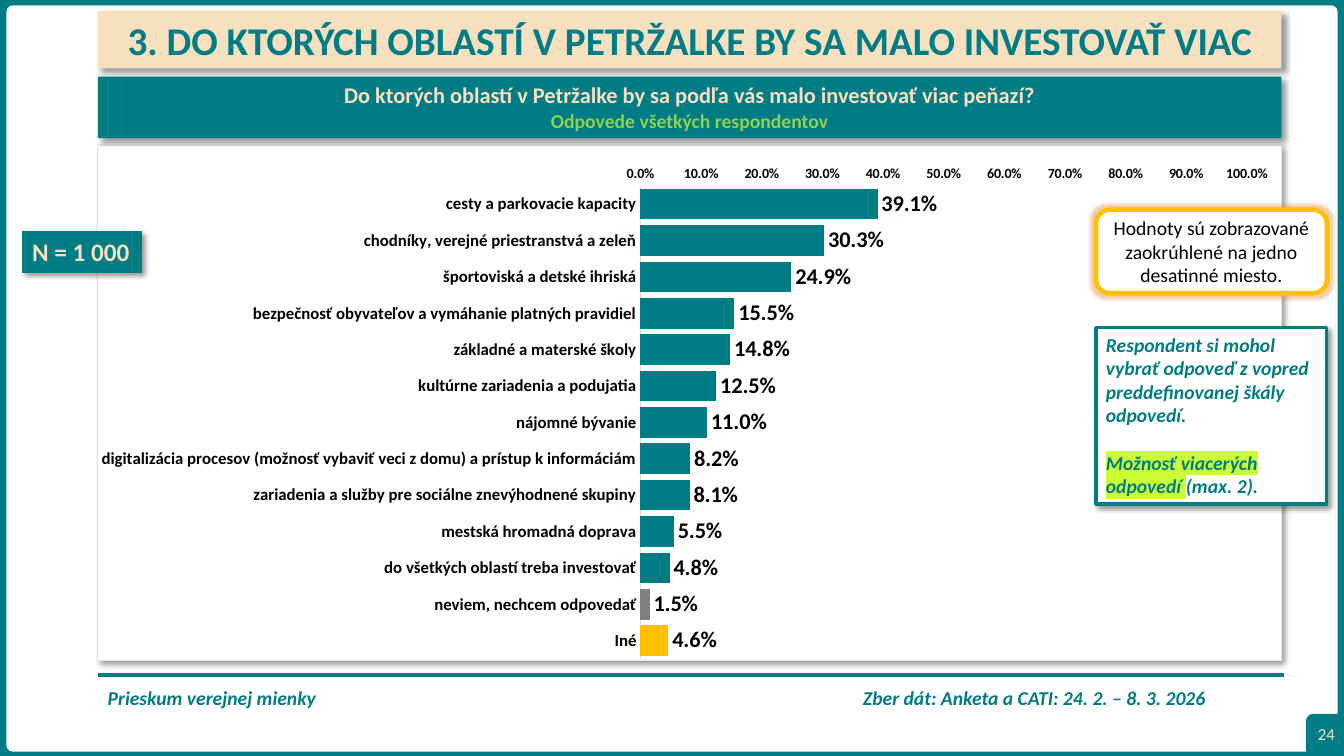
from lxml.etree import SubElement, fromstring
from pptx import Presentation
from pptx.chart.data import CategoryChartData
from pptx.dml.color import RGBColor
from pptx.enum.chart import XL_CHART_TYPE, XL_LABEL_POSITION, XL_TICK_MARK
from pptx.enum.shapes import MSO_CONNECTOR, MSO_SHAPE
from pptx.enum.text import MSO_ANCHOR, MSO_AUTO_SIZE, PP_ALIGN
from pptx.oxml.ns import nsdecls, qn
from pptx.util import Inches, Pt

COLORS = {
    "teal": "007C85", "sand": "F6E0C0", "white": "FFFFFF", "black": "000000",
    "pale": "E7E6E6", "axis": "D9D9D9", "grey": "808080", "amber": "FFC000",
    "green": "92D050", "lime": "CCFF33", "orange": "ED7D31",
}
FONT = "Calibri"
PERCENT = "###0.0%"
SHADOW = ('<a:outerShdw blurRad="50800" dist="38100" dir="2700000" algn="tl" rotWithShape="0">'
          '<a:srgbClr val="000000"><a:alpha val="40000"/></a:srgbClr></a:outerShdw>')
GLOW = (f'<a:glow rad="63500"><a:srgbClr val="{COLORS["orange"]}">'
        '<a:alpha val="40000"/></a:srgbClr></a:glow>')
LEFT, WIDTH = 0.97, 11.74
AREAS = [
    ("cesty a parkovacie kapacity", 0.391),
    ("chodníky, verejné priestranstvá a zeleň", 0.303),
    ("športoviská a detské ihriská", 0.249),
    ("bezpečnosť obyvateľov a vymáhanie platných pravidiel", 0.155),
    ("základné a materské školy", 0.148),
    ("kultúrne zariadenia a podujatia", 0.125),
    ("nájomné bývanie", 0.11),
    ("digitalizácia procesov (možnosť vybaviť veci z domu) a prístup k informáciám", 0.082),
    ("zariadenia a služby pre sociálne znevýhodnené skupiny", 0.081),
    ("mestská hromadná doprava", 0.055),
    ("do všetkých oblastí treba investovať", 0.048),
    ("neviem, nechcem odpovedať", 0.015),
    ("Iné", 0.046),
]


def rgb(name):
    """Return the palette colour called name."""
    return RGBColor.from_string(COLORS[name])


def style_font(font, size, color="black", bold=True, italic=False):
    """Apply the slide's typeface and the given format to a font."""
    font.name, font.size, font.bold, font.italic = FONT, Pt(size), bold, italic
    font.color.rgb = rgb(color)


def add_text(p, text, highlight=None, **fmt):
    """Add a formatted run to a paragraph."""
    r = p.add_run()
    r.text = text
    style_font(r.font, **fmt)
    if highlight:
        mark = fromstring(f'<a:highlight {nsdecls("a")}><a:srgbClr val="{COLORS[highlight]}"/></a:highlight>')
        r.font._element.find(qn("a:solidFill")).addnext(mark)


class SlideBuilder:
    """Holds the current slide and adds elements in its style."""

    def __init__(self, prs):
        """Start a title-only slide."""
        self.s = prs.slides.add_slide(prs.slide_layouts[5])

    def effects(self, sp, xml=""):
        """Give a shape exactly the listed effects."""
        sp._element.spPr.append(fromstring(f'<a:effectLst {nsdecls("a")}>{xml}</a:effectLst>'))

    def frame(self, sp, anchor=MSO_ANCHOR.TOP, wrap=True):
        """Set up a text frame and return its first paragraph."""
        tf = sp.text_frame
        tf.word_wrap, tf.vertical_anchor = wrap, anchor
        tf.auto_size = MSO_AUTO_SIZE.NONE
        p = tf.paragraphs[0]
        p.alignment = PP_ALIGN.LEFT
        return p

    def box(self, at, fill, line=None, width=1.0, effect="", radius=None, rounded=False):
        """Add a filled rectangle, square or rounded."""
        kind = MSO_SHAPE.ROUNDED_RECTANGLE if rounded else MSO_SHAPE.RECTANGLE
        sp = self.s.shapes.add_shape(kind, *map(Inches, at))
        if radius is not None:
            sp.adjustments[0] = radius
        sp.fill.solid()
        sp.fill.fore_color.rgb = rgb(fill)
        if line:
            sp.line.color.rgb = rgb(line)
            sp.line.width = Pt(width)
        else:
            sp.line.fill.background()
        self.effects(sp, effect)
        return sp

    def textbox(self, at, anchor=MSO_ANCHOR.TOP):
        """Add a text box and return its first paragraph."""
        return self.frame(self.s.shapes.add_textbox(*map(Inches, at)), anchor)

    def rule(self, x1, x2, y):
        """Add a horizontal teal rule."""
        line = self.s.shapes.add_connector(MSO_CONNECTOR.STRAIGHT, *map(Inches, (x1, y, x2, y)))
        line.line.color.rgb = rgb("teal")
        line.line.width = Pt(3)
        self.effects(line)

    def title(self, at, text):
        """Place the title placeholder in front as a sand banner."""
        sp = self.s.shapes.title
        sp.element.getparent().append(sp.element)
        sp.left, sp.top, sp.width, sp.height = map(Inches, at)
        sp.fill.solid()
        sp.fill.fore_color.rgb = rgb("sand")
        self.effects(sp, SHADOW)
        p = self.frame(sp)
        p.alignment, p.line_spacing = PP_ALIGN.CENTER, 1.0
        add_text(p, text, size=28, color="teal")

    def chart(self, at, rows, point_colors, layout):
        """Add the bar chart of shares per area."""
        data = CategoryChartData(number_format=PERCENT)
        data.categories = [name for name, _ in rows]
        data.add_series("Series 1", [value for _, value in rows])
        chart = self.s.shapes.add_chart(XL_CHART_TYPE.BAR_CLUSTERED, *map(Inches, at), data).chart
        chart.has_legend = chart.has_title = False
        style_font(chart.font, 14)
        plot = chart.plots[0]
        plot.gap_width, plot.vary_by_categories = 19, False
        series = plot.series[0]
        series.invert_if_negative = False
        fills = [(series, "teal")] + [(series.points[i], c) for i, c in point_colors.items()]
        for part, color in fills:
            part.format.fill.solid()
            part.format.fill.fore_color.rgb = rgb(color)
        labels = series.data_labels
        labels.show_value, labels.position = True, XL_LABEL_POSITION.OUTSIDE_END
        labels.number_format, labels.number_format_is_linked = PERCENT, False
        style_font(labels.font, 16)
        for axis, size in ((chart.category_axis, 12), (chart.value_axis, 10)):
            axis.major_tick_mark = axis.minor_tick_mark = XL_TICK_MARK.NONE
            axis.has_major_gridlines = False
            style_font(axis.tick_labels.font, size)
        chart.category_axis.reverse_order = True
        chart.category_axis.format.line.color.rgb = rgb("axis")
        chart.category_axis.format.line.width = Pt(0.75)
        axis = chart.value_axis
        axis.minimum_scale, axis.maximum_scale, axis.major_unit = 0, 1, 0.1
        axis.tick_labels.number_format = PERCENT
        axis.tick_labels.number_format_is_linked = False
        axis.format.line.fill.background()
        area = chart._chartSpace.chart.plotArea
        for old in area.findall(qn("c:layout")):
            area.remove(old)
        place = fromstring(f'<c:layout {nsdecls("c")}><c:manualLayout/></c:layout>')
        tags = [("layoutTarget", "inner"), ("xMode", "edge"), ("yMode", "edge")]
        for tag, val in tags + list(zip("xywh", layout)):
            SubElement(place[0], qn(f"c:{tag}")).set("val", str(val))
        area.insert(0, place)


def main():
    """Build the survey slide and save it."""
    prs = Presentation()
    prs.slide_width, prs.slide_height = Inches(13.33), Inches(7.5)
    b = SlideBuilder(prs)

    b.box((0, 0, 13.33, 7.5), "teal", "teal")
    b.box((0.07, 0.06, 13.19, 7.39), "white", "white", rounded=True, radius=0.008)
    p = b.textbox((LEFT, 6.82, 11.77, 0.44))
    p.line_spacing = 0.7
    tabs = SubElement(p._p.get_or_add_pPr(), qn("a:tabLst"))
    SubElement(tabs, qn("a:tab"), pos=str(Inches(7.49)), algn="l")
    add_text(p, "Prieskum verejnej mienky\tZber dát: Anketa a CATI: 24. 2. – 8. 3. 2026",
             size=14, color="teal", italic=True)
    b.box((12.96, 7.09, 0.37, 0.41), "teal", "teal", rounded=True)
    b.rule(LEFT, 12.73, 6.7)
    b.box((LEFT, 1.44, WIDTH, 5.11), "white", "pale", effect=SHADOW)
    p = b.textbox((12.9, 7.08, 0.51, 0.4), MSO_ANCHOR.MIDDLE)
    p.alignment = PP_ALIGN.CENTER
    add_text(p, "24", size=12, color="sand", bold=False)

    sp = b.box((LEFT, 0.76, WIDTH, 0.61), "teal", effect=SHADOW)
    p = b.frame(sp)
    p.alignment = PP_ALIGN.CENTER
    add_text(p, "Do ktorých oblastí v Petržalke by sa podľa vás malo investovať viac peňazí?",
             size=16, color="sand")
    p = sp.text_frame.add_paragraph()
    p.alignment = PP_ALIGN.CENTER
    add_text(p, "Odpovede všetkých respondentov", size=14, color="green")

    sp = b.box((0.22, 2.3, 1.18, 0.4), "teal", "teal", 0.75, SHADOW)
    add_text(b.frame(sp, wrap=False), "N = 1 000", size=18, color="sand")

    sp = b.box((10.87, 2.08, 2.29, 0.83), "white", "amber", 3.25, GLOW, rounded=True)
    p = b.frame(sp, MSO_ANCHOR.MIDDLE)
    p.alignment = PP_ALIGN.CENTER
    add_text(p, "Hodnoty sú zobrazované zaokrúhlené na jedno desatinné miesto.", size=14, bold=False)

    b.title((LEFT, 0.11, WIDTH, 0.57), "3. DO KTORÝCH OBLASTÍ V PETRŽALKE BY SA MALO INVESTOVAŤ VIAC")
    b.chart((0.63, 1.44, 12.15, 5.19), AREAS, {11: "grey", 12: "amber"}, (0.471, 0.078, 0.495, 0.904))

    note = {"size": 14, "color": "teal", "italic": True}
    sp = b.box((10.87, 3.25, 2.29, 1.75), "white", "teal", 2.25, SHADOW)
    add_text(b.frame(sp), "Respondent si mohol vybrať odpoveď z vopred preddefinovanej škály odpovedí.", **note)
    p = sp.text_frame.add_paragraph()
    p.alignment, p.space_before = PP_ALIGN.LEFT, Pt(17)
    add_text(p, "Možnosť viacerých odpovedí ", highlight="lime", **note)
    add_text(p, "(max. 2).", **note)

    prs.save("out.pptx")


if __name__ == "__main__":
    main()
